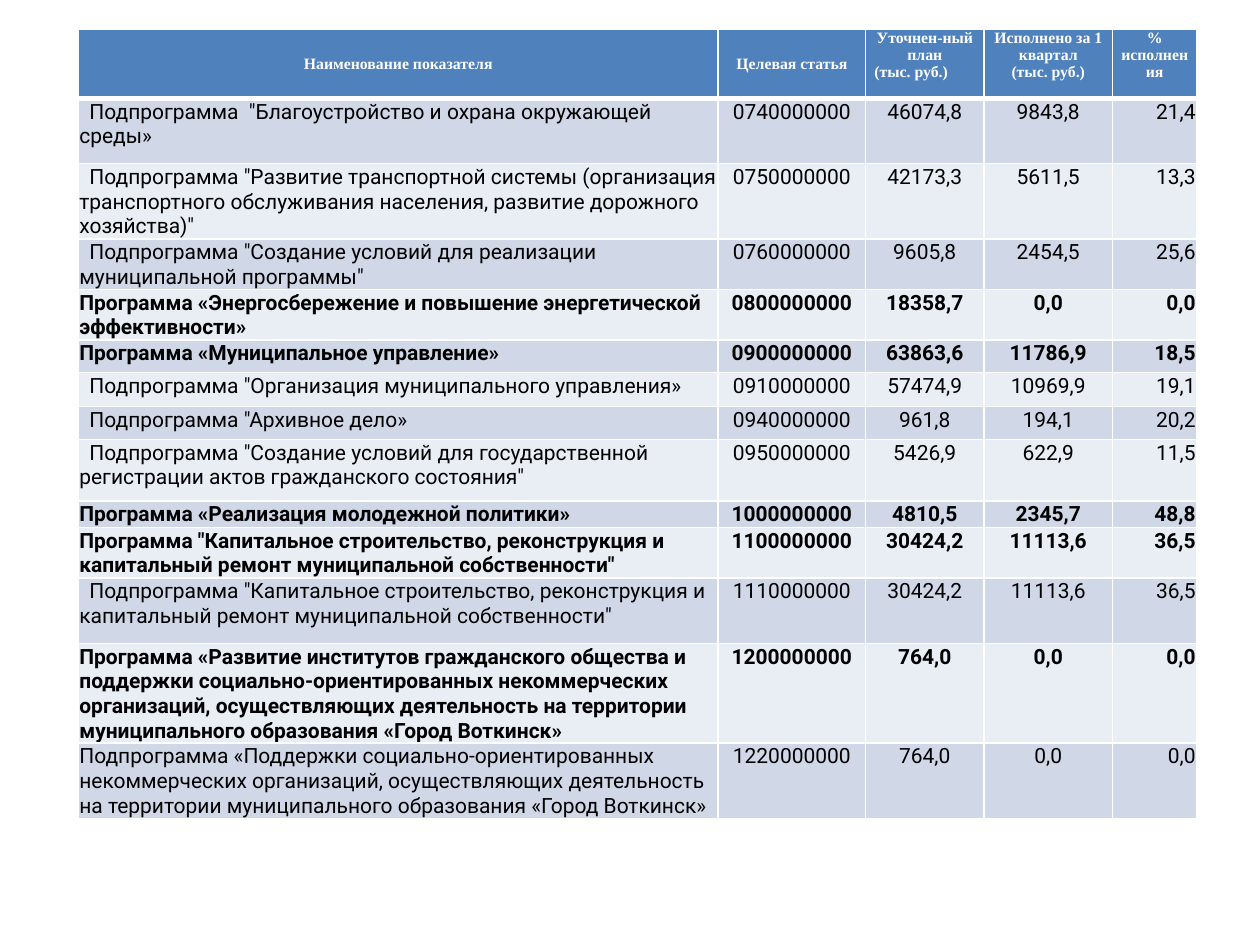
import pptx
import pptx.dml.color
import pptx.enum.text
import pptx.oxml
import pptx.oxml.ns
import pptx.util
from pptx.util import Inches

COLORS = {
    "header": "4F81BD",
    "odd": "D0D8E8",
    "even": "E9EDF4",
    "border": "FFFFFF",
    "header_text": "FFFFFF",
    "text": "000000",
}
ALIGN = pptx.enum.text.PP_ALIGN
ANCHOR = pptx.enum.text.MSO_ANCHOR

COLUMN_WIDTHS = [5.08, 1.17, 0.94, 1.02, 0.67]
ROW_HEIGHTS = [0.55, 0.52, 0.36, 0.39, 0.39, 0.26, 0.27,
               0.26, 0.49, 0.21, 0.39, 0.52, 0.32, 0.32]
BODY_ALIGNMENTS = [ALIGN.LEFT, ALIGN.CENTER, ALIGN.CENTER, ALIGN.CENTER, ALIGN.RIGHT]

# Each heading: vertical anchor, then its paragraphs with their alignment
HEADINGS = [
    (ANCHOR.MIDDLE, [("Наименование показателя", ALIGN.CENTER)]),
    (ANCHOR.MIDDLE, [("Целевая статья", ALIGN.CENTER)]),
    (ANCHOR.TOP, [("Уточнен-ный план", ALIGN.CENTER), ("(тыс. руб.)", ALIGN.LEFT)]),
    (ANCHOR.TOP, [("Исполнено за 1 квартал", ALIGN.CENTER), ("(тыс. руб.)", ALIGN.CENTER)]),
    (ANCHOR.TOP, [("% исполнения", ALIGN.CENTER)]),
]
PROGRAMS = [
    ('Подпрограмма  "Благоустройство и охрана окружающей среды»',
     "0740000000", "46074,8", "9843,8", "21,4"),
    ('Подпрограмма "Развитие транспортной системы (организация транспортного '
     'обслуживания населения, развитие дорожного хозяйства)"',
     "0750000000", "42173,3", "5611,5", "13,3"),
    ('Подпрограмма "Создание условий для реализации муниципальной программы"',
     "0760000000", "9605,8", "2454,5", "25,6"),
    ("Программа «Энергосбережение и повышение энергетической эффективности»",
     "0800000000", "18358,7", "0,0", "0,0"),
    ("Программа «Муниципальное управление»",
     "0900000000", "63863,6", "11786,9", "18,5"),
    ('Подпрограмма "Организация муниципального управления»',
     "0910000000", "57474,9", "10969,9", "19,1"),
    ('Подпрограмма "Архивное дело»',
     "0940000000", "961,8", "194,1", "20,2"),
    ('Подпрограмма "Создание условий для государственной регистрации актов '
     'гражданского состояния"',
     "0950000000", "5426,9", "622,9", "11,5"),
    ("Программа «Реализация молодежной политики»",
     "1000000000", "4810,5", "2345,7", "48,8"),
    ('Программа "Капитальное строительство, реконструкция и капитальный ремонт '
     'муниципальной собственности"',
     "1100000000", "30424,2", "11113,6", "36,5"),
    ('Подпрограмма "Капитальное строительство, реконструкция и капитальный ремонт '
     'муниципальной собственности"',
     "1110000000", "30424,2", "11113,6", "36,5"),
    ("Программа «Развитие институтов гражданского общества и поддержки "
     "социально-ориентированных некоммерческих организаций, осуществляющих "
     "деятельность на территории муниципального образования «Город Воткинск»",
     "1200000000", "764,0", "0,0", "0,0"),
    ("Подпрограмма «Поддержки социально-ориентированных некоммерческих организаций, "
     "осуществляющих деятельность на территории муниципального образования "
     "«Город Воткинск»",
     "1220000000", "764,0", "0,0", "0,0"),
]


def rgb(name):
    return pptx.dml.color.RGBColor.from_string(COLORS[name])


def style_cell(cell, fill, margins, bottom_width=1, top_width=1):
    """Set margins (left, top, right, bottom), borders in points and fill."""
    (cell.margin_left, cell.margin_top,
     cell.margin_right, cell.margin_bottom) = map(Inches, margins)
    properties = cell._tc.get_or_add_tcPr()
    for side, width in (("L", 1), ("R", 1), ("T", top_width), ("B", bottom_width)):
        properties.append(pptx.oxml.parse_xml(
            f'<a:ln{side} {pptx.oxml.ns.nsdecls("a")} w="{pptx.util.Pt(width)}">'
            f'<a:solidFill><a:srgbClr val="{COLORS["border"]}"/></a:solidFill>'
            f'</a:ln{side}>'))
    cell.fill.solid()
    cell.fill.fore_color.rgb = rgb(fill)


def write(paragraph, text, alignment, font_name, size, color, bold):
    paragraph.alignment = alignment
    run = paragraph.add_run()
    run.text = text
    run.font.name = font_name
    run.font.size = pptx.util.Pt(size)
    run.font.color.rgb = rgb(color)
    run.font.bold = bold


def fill_header(table):
    for column, (anchor, lines) in enumerate(HEADINGS):
        cell = table.cell(0, column)
        style_cell(cell, "header", (0.07, 0, 0.07, 0), bottom_width=3)
        cell.vertical_anchor = anchor
        frame = cell.text_frame
        for index, (text, alignment) in enumerate(lines):
            paragraph = frame.add_paragraph() if index else frame.paragraphs[0]
            write(paragraph, text, alignment, "Times New Roman", 9, "header_text", True)


def fill_programs(table):
    """Programmes are bold; quoted subprogrammes have an indented first line."""
    for row, program in enumerate(PROGRAMS, start=1):
        bold = program[0].startswith("Программа")
        indented = program[0].startswith("Подпрограмма") and "«Поддержки" not in program[0]
        for column, (text, alignment) in enumerate(zip(program, BODY_ALIGNMENTS)):
            cell = table.cell(row, column)
            style_cell(cell, "odd" if row % 2 else "even", (0.01, 0.01, 0.01, 0),
                       top_width=3 if row == 1 else 1)
            paragraph = cell.text_frame.paragraphs[0]
            write(paragraph, text, alignment, "Roboto", 12, "text", bold)
            if indented and column == 0:
                paragraph_properties = paragraph._p.get_or_add_pPr()
                paragraph_properties.set("marL", "0")
                paragraph_properties.set("indent", str(Inches(0.08)))


def add_budget_table(slide, left, top):
    table = slide.shapes.add_table(
        len(ROW_HEIGHTS), len(COLUMN_WIDTHS), left, top,
        Inches(sum(COLUMN_WIDTHS)), Inches(sum(ROW_HEIGHTS))).table
    for column, width in zip(table.columns, COLUMN_WIDTHS):
        column.width = Inches(width)
    for row, height in zip(table.rows, ROW_HEIGHTS):
        row.height = Inches(height)
    fill_header(table)
    fill_programs(table)


def main():
    presentation = pptx.Presentation()
    presentation.slide_width = Inches(10)
    presentation.slide_height = Inches(7.5)
    slide = presentation.slides.add_slide(presentation.slide_layouts[6])
    add_budget_table(slide, Inches(0.62), Inches(0.23))
    presentation.save("out.pptx")


if __name__ == "__main__":
    main()
